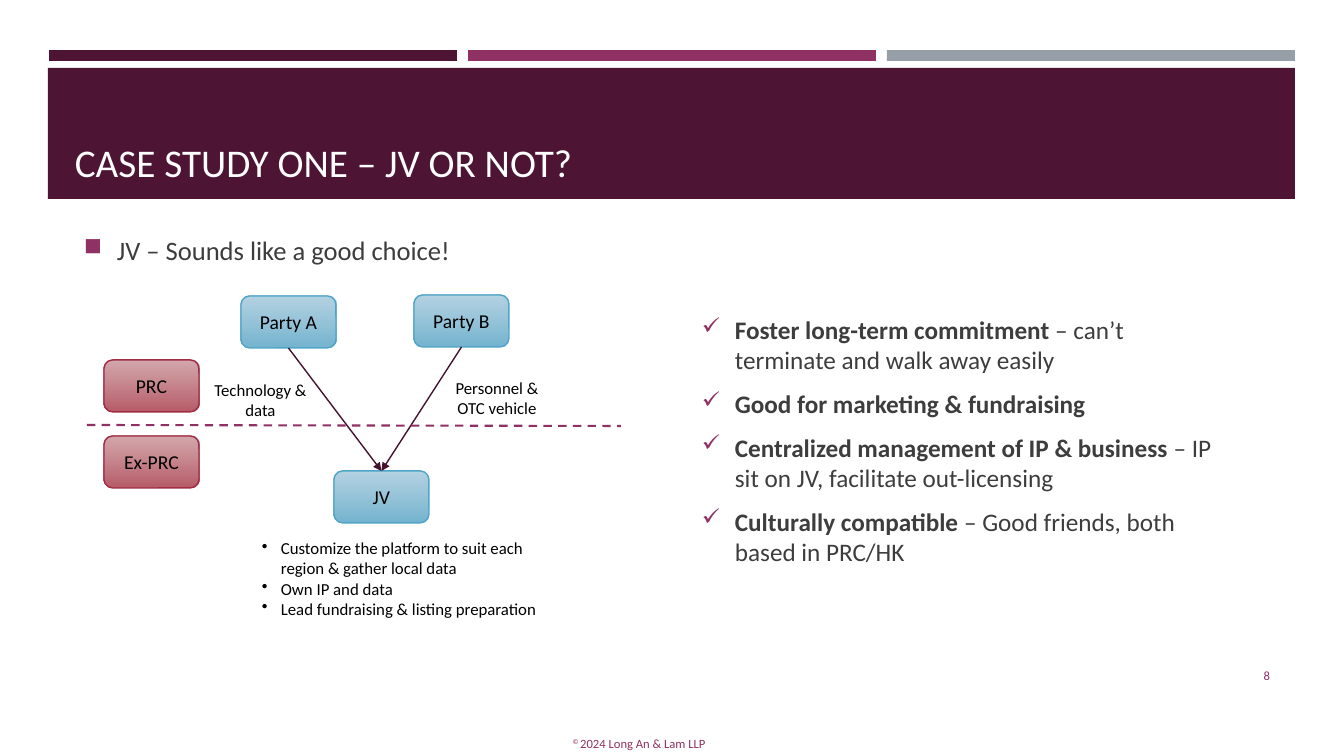
from dataclasses import dataclass

from lxml.etree import SubElement
from pptx import Presentation
from pptx.dml.color import RGBColor
from pptx.enum.dml import MSO_LINE
from pptx.enum.shapes import MSO_CONNECTOR, MSO_SHAPE
from pptx.enum.text import MSO_ANCHOR, PP_ALIGN
from pptx.oxml.ns import qn
from pptx.util import Emu, Pt

PX_PER_INCH = 100.8


def px(length):
    return Emu(round(length * 914400 / PX_PER_INCH))


@dataclass(frozen=True)
class Theme:
    font: str = "Calibri"
    plum: str = "4D1434"
    magenta: str = "903163"
    gray: str = "969FA7"
    arrow: str = "45122F"
    body: str = "3D3D3D"
    black: str = "000000"
    white: str = "FFFFFF"
    # Node colours: gradient top, gradient bottom, outline
    blue_node: tuple = ("ACCEDF", "75B4CF", "4FA5C7")
    red_node: tuple = ("CF9FA4", "B75C68", "A02D44")
    title_size: int = 28
    lead_size: int = 19
    list_size: int = 18
    node_size: int = 14
    label_size: int = 12
    footer_size: int = 9


class SlideBuilder:
    def __init__(self, slide, theme):
        self.slide = slide
        self.theme = theme

    def style_run(self, run, size, color):
        run.font.name = self.theme.font
        run.font.size = Pt(size)
        run.font.color.rgb = RGBColor.from_string(color)

    def bar(self, left, top, width, height, color):
        shape = self.slide.shapes.add_shape(
            MSO_SHAPE.RECTANGLE, px(left), px(top), px(width), px(height))
        shape.shadow.inherit = False
        shape.fill.solid()
        shape.fill.fore_color.rgb = RGBColor.from_string(color)
        shape.line.fill.background()

    def node(self, left, top, label, colors):
        shape = self.slide.shapes.add_shape(
            MSO_SHAPE.ROUNDED_RECTANGLE, px(left), px(top), px(95), px(52))
        shape.shadow.inherit = False
        shape.fill.gradient()
        shape.fill.gradient_angle = 270
        for stop, color in zip(shape.fill.gradient_stops, colors):
            stop.color.rgb = RGBColor.from_string(color)
        top_color = next(shape._element.spPr.iter(qn("a:srgbClr")))
        SubElement(top_color, qn("a:alpha"), val="90000")
        shape.line.color.rgb = RGBColor.from_string(colors[2])
        shape.line.width = Pt(1)
        frame = shape.text_frame
        frame.text = label
        frame.vertical_anchor = MSO_ANCHOR.MIDDLE
        frame.paragraphs[0].alignment = PP_ALIGN.CENTER
        self.style_run(frame.paragraphs[0].runs[0], self.theme.node_size, self.theme.black)
        return shape

    def line(self, start, end, color, width):
        connector = self.slide.shapes.add_connector(
            MSO_CONNECTOR.STRAIGHT, *map(px, start + end))
        connector.line.color.rgb = RGBColor.from_string(color)
        connector.line.width = Pt(width)
        SubElement(connector._element.spPr, qn("a:effectLst"))
        return connector

    def arrow(self, source, target):
        connector = self.line((0, 0), (0, 0), self.theme.arrow, 1)
        connector.begin_connect(source, 2)
        connector.end_connect(target, 0)
        SubElement(connector.line._get_or_add_ln(), qn("a:tailEnd"), type="triangle")

    def text(self, box, lines, size, color,
             align=PP_ALIGN.LEFT, anchor=MSO_ANCHOR.TOP):
        frame = self.slide.shapes.add_textbox(*map(px, box)).text_frame
        frame.word_wrap = True
        frame.vertical_anchor = anchor
        frame.text = "\n".join(lines)
        for paragraph in frame.paragraphs:
            paragraph.alignment = align
            for run in paragraph.runs:
                self.style_run(run, size, color)
        return frame.paragraphs

    def bullet(self, paragraph, character, indent, color=None):
        properties = paragraph._p.get_or_add_pPr()
        properties.set("marL", str(px(indent)))
        properties.set("indent", str(px(-indent)))
        if color:
            SubElement(SubElement(properties, qn("a:buClr")), qn("a:srgbClr"), val=color)
            SubElement(properties, qn("a:buSzPct"), val="92000")
        SubElement(properties, qn("a:buChar"), char=character)

    def append_run(self, paragraph, text, size, color):
        run = paragraph.add_run()
        run.text = text
        self.style_run(run, size, color)


def main():
    theme = Theme()
    presentation = Presentation()
    presentation.slide_width = px(1344)
    presentation.slide_height = px(756)
    slide = presentation.slides.add_slide(presentation.slide_layouts[6])
    builder = SlideBuilder(slide, theme)

    # Header bars and title
    for index, color in enumerate((theme.plum, theme.magenta, theme.gray)):
        builder.bar(49 + 419 * index, 50, 408, 11, color)
    builder.bar(48, 68, 1247, 131, theme.plum)
    builder.text((65, 78, 1216, 112), ["CASE STUDY ONE – JV OR NOT?"],
                 theme.title_size, theme.white, anchor=MSO_ANCHOR.BOTTOM)

    # Lead statement
    lead = builder.text((74, 228, 493, 44), ["JV – Sounds like a good choice!"],
                        theme.lead_size, theme.body, anchor=MSO_ANCHOR.MIDDLE)
    builder.bullet(lead[0], "■", 33, theme.magenta)

    # Joint venture diagram
    party_a = builder.node(241, 296, "Party A", theme.blue_node)
    party_b = builder.node(414, 295, "Party B", theme.blue_node)
    venture = builder.node(334, 471, "JV", theme.blue_node)
    for party in (party_a, party_b):
        builder.arrow(party, venture)
    builder.node(104, 360, "PRC", theme.red_node)
    builder.node(104, 436, "Ex-PRC", theme.red_node)
    border = builder.line((87, 425), (621, 426), theme.magenta, 1.5)
    border.line.dash_style = MSO_LINE.DASH

    # Contributions and role of the venture
    for box, lines in (
        ((176, 375, 169, 50), ["Technology &", "data"]),
        ((418, 373, 158, 50), ["Personnel &", "OTC vehicle"]),
    ):
        builder.text(box, lines, theme.label_size, theme.black, PP_ALIGN.CENTER)
    roles = builder.text(
        (252, 533, 315, 92),
        ["Customize the platform to suit each region & gather local data",
         "Own IP and data",
         "Lead fundraising & listing preparation"],
        theme.label_size, theme.black)
    for paragraph in roles:
        builder.bullet(paragraph, "•", 19)

    # Advantages
    advantages = (
        ("Foster long-term commitment", " – can’t terminate and walk away easily"),
        ("Good for marketing & fundraising", ""),
        ("Centralized management of IP & business ",
         "– IP sit on JV, facilitate out-licensing"),
        ("Culturally compatible ", "– Good friends, both based in PRC/HK"),
    )
    paragraphs = builder.text((692, 283, 532, 315), [point for point, _ in advantages],
                              theme.list_size, theme.body, anchor=MSO_ANCHOR.MIDDLE)
    for index, (paragraph, (_, detail)) in enumerate(zip(paragraphs, advantages)):
        builder.bullet(paragraph, "✓", 33, theme.magenta)
        paragraph.space_before = Pt(3.6 if index else 0)
        paragraph.space_after = Pt(6)
        paragraph.runs[0].font.bold = True
        if detail:
            builder.append_run(paragraph, detail, theme.list_size, theme.body)

    # Footer
    notice = builder.text((303, 731, 672, 25), ["© "], theme.footer_size,
                          theme.magenta, PP_ALIGN.CENTER)[0]
    notice.runs[0].font._element.set("baseline", "30000")
    builder.append_run(notice, "2024 Long An & Lam LLP", theme.footer_size, theme.magenta)
    builder.text((1164, 656, 116, 40), ["8"], theme.footer_size, theme.magenta,
                 PP_ALIGN.RIGHT, MSO_ANCHOR.MIDDLE)

    presentation.save("out.pptx")


if __name__ == "__main__":
    main()
